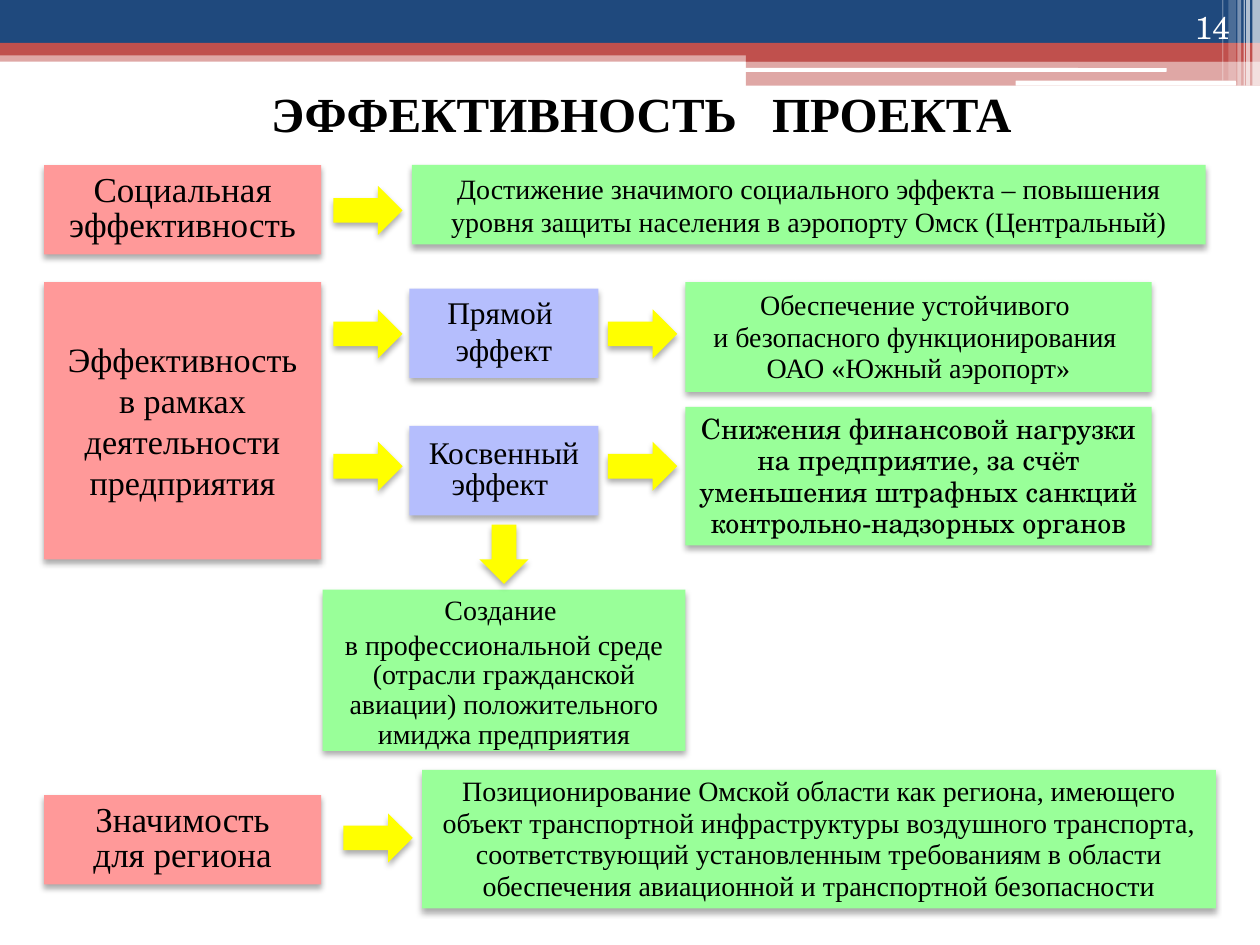
from lxml.etree import SubElement
from pptx import Presentation
from pptx.dml.color import RGBColor
from pptx.enum.shapes import MSO_SHAPE
from pptx.enum.text import MSO_ANCHOR, PP_ALIGN
from pptx.oxml.ns import qn
from pptx.util import Inches, Pt

WIDE, HIGH = 10, 7.5
SERIF, SCHOOL = "Times New Roman", "TeX Gyre Schola"
HUES = {
    "navy": "1F497D", "red": "C0504D", "white": "FFFFFF", "black": "000000",
    "pink": "FF9999", "green": "99FF99", "lilac": "B5BEFD", "yellow": "FFFF00",
}

# Header bands: left, top, width, height, colour, opacity in percent
BANDS = [
    (0, 0.4, WIDE, 0.09, "red", 50),
    (0, 0, WIDE, 0.34, "navy", 100),
    (0, 0.34, WIDE, 0.1, "red", 100),
    (5.92, 0.39, 4.08, 0.1, "red", 100),
    (5.92, 0.48, 4.08, 0.2, "red", 50),
]
PILLS = [(5.91, 0.54, 3.35, 0.03), (8.06, 0.64, 1.75, 0.04)]
# Vertical stripes: left, width, height, opacity
STRIPES = [
    (9.94, 0.06, 0.68, 65), (9.89, 0.03, 0.68, 65), (9.87, 0.01, 0.68, 60),
    (9.82, 0.03, 0.68, 40), (9.75, 0.06, 0.64, 20), (9.7, 0.01, 0.64, 30),
]

TITLE = [("ЭФФЕКТИВНОСТЬ", 28), ("  ", 40), ("ПРОЕКТА", 28)]

# Columns: left, width
COLS = {
    "topic": (0.35, 2.2), "kind": (3.25, 1.5), "result": (5.44, 3.7),
    "social": (3.27, 6.3), "region": (3.35, 6.3), "image": (2.56, 2.88),
}
# Boxes: column, top, height, colour, paragraphs, text format
BOXES = [
    ("topic", 1.31, 0.71, "pink", ["Социальная эффективность"],
     dict(size=20, line=20)),
    ("social", 1.31, 0.63, "green",
     ["Достижение значимого социального эффекта – повышения уровня защиты "
      "населения в аэропорту Омск (Центральный)"], dict(top=True)),
    ("topic", 2.24, 2.2, "pink",
     ["Эффективность в рамках деятельности предприятия"],
     dict(size=19.5, before=3)),
    ("kind", 2.29, 0.71, "lilac", ["Прямой ", "эффект"],
     dict(size=18, line=18, before=3)),
    ("result", 2.24, 0.87, "green",
     ["Обеспечение устойчивого ", "и безопасного функционирования ",
      "ОАО «Южный аэропорт»"], dict(line=18)),
    ("kind", 3.38, 0.71, "lilac", ["Косвенный эффект "],
     dict(size=18, line=18)),
    ("result", 3.23, 1.1, "green",
     ["Снижения финансовой нагрузки на предприятие, за счёт уменьшения "
      "штрафных санкций контрольно-надзорных органов"],
     dict(line=18, before=3, font=SCHOOL, top=True)),
    ("image", 4.68, 1.28, "green",
     ["Создание ", "в профессиональной среде (отрасли гражданской авиации) "
      "положительного имиджа предприятия"],
     dict(line=17, before=3, top=True)),
    ("topic", 6.31, 0.71, "pink", ["Значимость", "для региона"],
     dict(size=20, line=20)),
    ("region", 6.11, 1.1, "green",
     ["Позиционирование Омской области как региона, имеющего объект "
      "транспортной инфраструктуры воздушного транспорта, соответствующий "
      "установленным требованиям в области обеспечения авиационной и "
      "транспортной безопасности"], dict(line=18, top=True)),
]
# Arrows: centre x, centre y, width, turn
ARROWS = [
    (2.92, 1.67, 0.55, 0), (2.92, 2.65, 0.55, 0), (5.1, 2.65, 0.55, 0),
    (2.92, 3.7, 0.55, 0), (5.1, 3.7, 0.55, 0), (3, 6.65, 0.55, 0),
    (4, 4.4, 0.47, 90),
]
THICK = 0.39


def tint(name):
    return RGBColor.from_string(HUES[name])


def write(frame, paras, size=16, font=SERIF, hue="black", bold=False,
          line=None, before=0, align=PP_ALIGN.CENTER, top=False):
    """Fill a frame; a paragraph is a string or a list of (text, size)."""
    frame.word_wrap = True
    frame.vertical_anchor = MSO_ANCHOR.TOP if top else MSO_ANCHOR.MIDDLE
    for i, runs in enumerate(paras):
        para = frame.add_paragraph() if i else frame.paragraphs[0]
        para.alignment = align
        para.space_before = Pt(before)
        if line:
            para.line_spacing = Pt(line)
        for text, points in [(runs, size)] if isinstance(runs, str) else runs:
            run = para.add_run()
            run.text = text
            run.font.size = Pt(points)
            run.font.name = font
            run.font.bold = bold
            run.font.color.rgb = tint(hue)


def fade(color, share):
    SubElement(color, qn("a:alpha"), val=str(share * 1000))


def draw(slide, x, y, w, h, hue, kind=MSO_SHAPE.RECTANGLE, share=100,
         raised=False):
    shape = slide.shapes.add_shape(
        kind, Inches(x), Inches(y), Inches(w), Inches(h))
    shape.fill.solid()
    shape.fill.fore_color.rgb = tint(hue)
    shape.line.fill.background()
    shape.shadow.inherit = False
    props = shape.element.spPr
    if share < 100:
        fade(props.find(".//" + qn("a:srgbClr")), share)
    if raised:
        glow = SubElement(
            props.find(qn("a:effectLst")), qn("a:outerShdw"),
            blurRad=str(Pt(3.5)), dist=str(Pt(2.2)), dir="5400000",
            rotWithShape="0")
        fade(SubElement(glow, qn("a:srgbClr"), val=HUES["black"]), 32)
    return shape


def header(slide):
    for x, y, w, h, hue, share in BANDS:
        draw(slide, x, y, w, h, hue, share=share)
    for pill in PILLS:
        draw(slide, *pill, "white", MSO_SHAPE.ROUNDED_RECTANGLE)
    for x, w, h, share in STRIPES:
        draw(slide, x, 0, w, h, "white", share=share)

    title = slide.shapes.title
    title.left, title.top = Inches(0.59), Inches(0.68)
    title.width, title.height = Inches(9), Inches(0.55)
    write(title.text_frame, [TITLE], bold=True, line=30)

    box = slide.shapes.add_textbox(
        Inches(9.41), Inches(0.14), Inches(0.35), Inches(0.22))
    frame = box.text_frame
    frame.margin_left = frame.margin_right = 0
    frame.margin_top = frame.margin_bottom = 0
    write(frame, ["14"], size=18, font=SCHOOL, hue="white", line=16.4,
          align=PP_ALIGN.RIGHT)
    frame.vertical_anchor = MSO_ANCHOR.BOTTOM


def main():
    deck = Presentation()
    deck.slide_width, deck.slide_height = Inches(WIDE), Inches(HIGH)
    slide = deck.slides.add_slide(deck.slide_layouts[5])
    header(slide)
    for col, y, h, hue, paras, style in BOXES:
        x, w = COLS[col]
        box = draw(slide, x, y, w, h, hue, raised=True)
        write(box.text_frame, paras, **style)
    for x, y, w, turn in ARROWS:
        arrow = draw(slide, x - w / 2, y - THICK / 2, w, THICK, "yellow",
                     MSO_SHAPE.RIGHT_ARROW, raised=True)
        arrow.rotation = turn
    deck.save("out.pptx")


if __name__ == "__main__":
    main()
